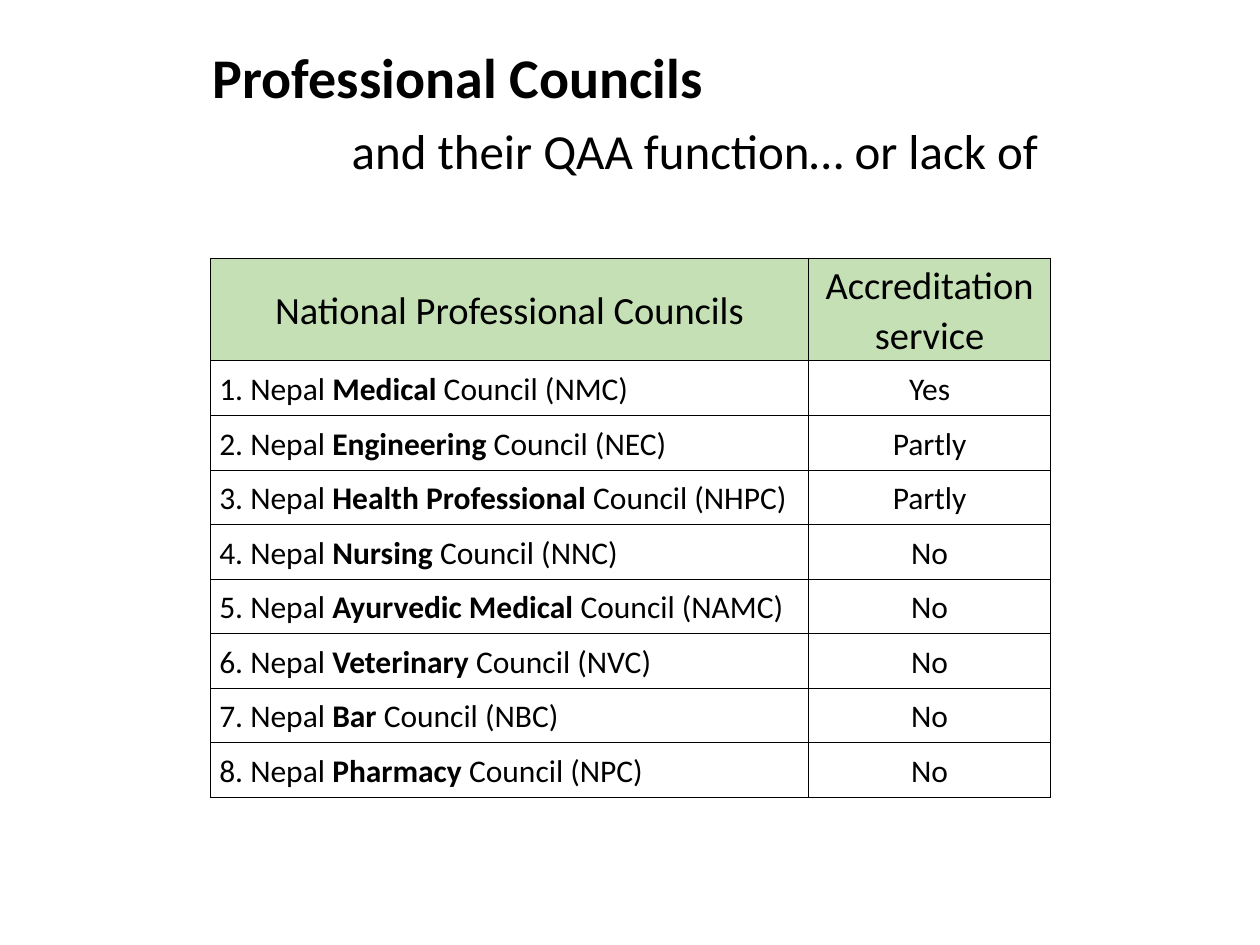
from lxml.etree import SubElement
from pptx import Presentation
from pptx.dml.color import RGBColor
from pptx.enum.text import MSO_ANCHOR as Anchor, PP_ALIGN as Align
from pptx.oxml.ns import qn
from pptx.util import Cm, Pt

BLACK = "000000"
HEADER_GREEN = "C5E0B4"
HEADINGS = ["National Professional Councils", "Accreditation service"]
COUNCILS = [
    ("Medical", "NMC", "Yes"),
    ("Engineering", "NEC", "Partly"),
    ("Health Professional", "NHPC", "Partly"),
    ("Nursing", "NNC", "No"),
    ("Ayurvedic Medical", "NAMC", "No"),
    ("Veterinary", "NVC", "No"),
    ("Bar", "NBC", "No"),
    ("Pharmacy", "NPC", "No"),
]


def color(value):
    return RGBColor.from_string(value)


def style_paragraph(para, size, align=Align.LEFT):
    para.alignment = align
    para.line_spacing = 1.07
    para.font.name = "Calibri"
    para.font.size = Pt(size)
    para.font.color.rgb = color(BLACK)


def add_borders(cell):
    properties = cell._tc.get_or_add_tcPr()
    for side in ("lnL", "lnR", "lnT", "lnB"):
        line = SubElement(properties, qn(f"a:{side}"), w=str(Pt(0.25)))
        fill = SubElement(line, qn("a:solidFill"))
        SubElement(fill, qn("a:srgbClr"), val=BLACK)


def fill_cell(cell, spans, size, align, background=None):
    cell.vertical_anchor = Anchor.MIDDLE
    cell.margin_left = cell.margin_right = Cm(0.18)
    cell.margin_top = Cm(0.02)
    cell.margin_bottom = 0
    add_borders(cell)
    if background:
        cell.fill.solid()
        cell.fill.fore_color.rgb = color(background)
    else:
        cell.fill.background()
    para = cell.text_frame.paragraphs[0]
    for text, bold in spans:
        span = para.add_run()
        span.text = text
        if bold:
            span.font.bold = True
    style_paragraph(para, size, align)


def add_heading(page, left, top, width, height):
    box = page.shapes.add_textbox(left, top, width, height)
    frame = box.text_frame
    frame.word_wrap = True
    title = frame.paragraphs[0]
    title.text = "Professional Councils"
    style_paragraph(title, 32)
    title.font.bold = True
    subtitle = frame.add_paragraph()
    subtitle.text = "and their QAA function… or lack of"
    subtitle._p.get_or_add_pPr().set("marL", str(Cm(2.8)))
    style_paragraph(subtitle, 28)
    subtitle.space_before = Pt(4)


def add_council_table(page, left, top, width, height):
    header_height = Cm(2.06)
    service_width = Cm(4.88)
    table = page.shapes.add_table(
        len(COUNCILS) + 1, len(HEADINGS), left, top, width, height
    ).table
    table.first_row = table.horz_banding = False
    table.columns[0].width = width - service_width
    table.columns[1].width = service_width
    for row in table.rows:
        row.height = (height - header_height) // len(COUNCILS)
    table.rows[0].height = header_height

    for column, heading in enumerate(HEADINGS):
        fill_cell(table.cell(0, column), [(heading, False)], 22, Align.CENTER, HEADER_GREEN)
    for number, (field, acronym, service) in enumerate(COUNCILS, 1):
        name = [(f"{number}. Nepal ", False), (field, True), (f" Council ({acronym})", False)]
        fill_cell(table.cell(number, 0), name, 18, Align.LEFT)
        fill_cell(table.cell(number, 1), [(service, False)], 18, Align.CENTER)


def main():
    deck = Presentation()
    deck.slide_width = Cm(25.4)
    deck.slide_height = Cm(19.05)
    page = deck.slides.add_slide(deck.slide_layouts[6])
    add_council_table(page, Cm(4.24), Cm(5.21), Cm(16.94), Cm(10.86))
    add_heading(page, Cm(4.04), Cm(0.64), Cm(17.53), Cm(3.18))
    deck.save("out.pptx")


if __name__ == "__main__":
    main()
